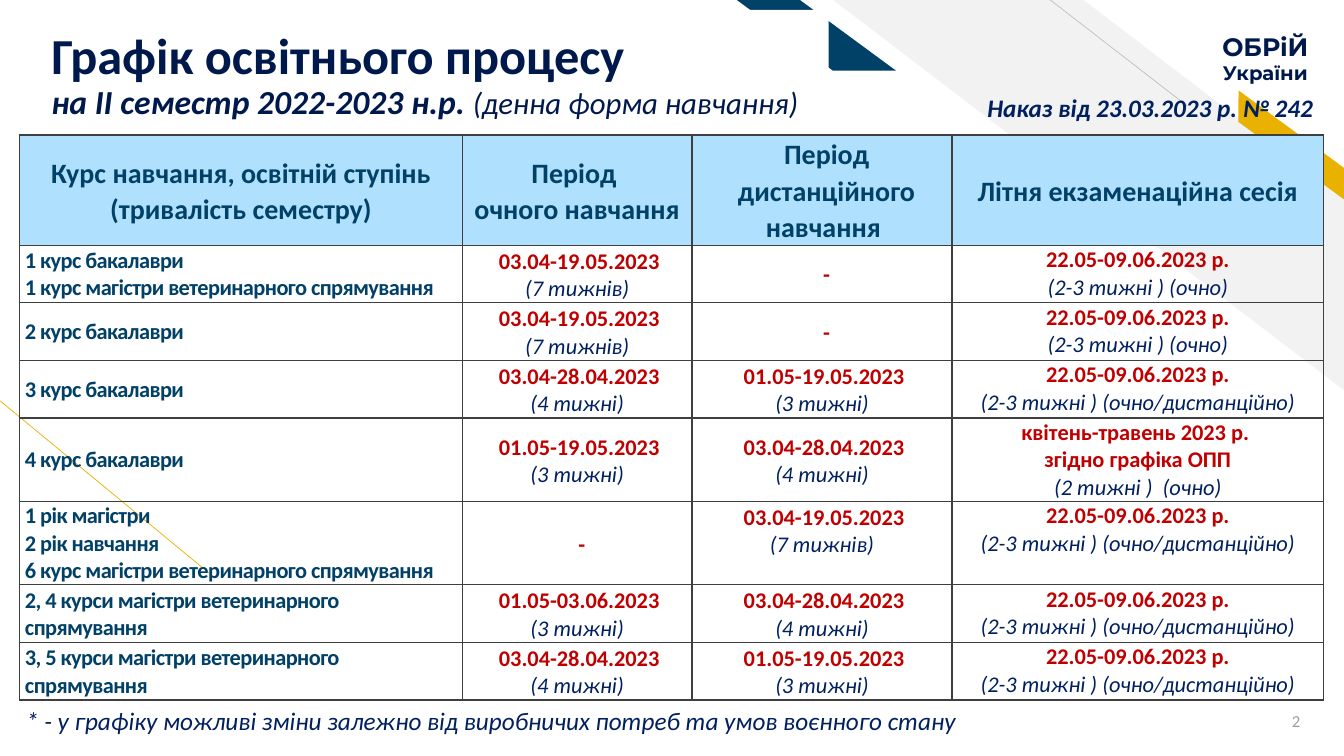
from dataclasses import dataclass

import lxml.etree
import pptx
import pptx.dml.color
import pptx.enum.shapes
import pptx.enum.text
import pptx.oxml.ns
import pptx.util

Cm = pptx.util.Cm
Kind = pptx.enum.shapes.MSO_SHAPE
Align = pptx.enum.text.PP_ALIGN
Anchor = pptx.enum.text.MSO_ANCHOR
qn = pptx.oxml.ns.qn

COLORS = {
    "navy": "00194C", "blue": "014067", "ink": "002060", "red": "C00000",
    "sky": "AFE0FE", "gold": "EAB200", "pale": "F2F2F2", "gray": "BFBFBF",
    "dim": "9F9F9F", "edge": "3F3F3F", "white": "FFFFFF",
}


@dataclass
class Band:
    kind: int
    box: tuple
    color: str
    adj: float
    turn: float = 0


@dataclass
class Stroke:
    start: tuple
    end: tuple
    color: str


@dataclass
class Term:
    group: str
    face: str
    remote: str
    exam: str
    middle: bool = False


BANDS = [
    Band(Kind.DIAGONAL_STRIPE, (21, 0, 12.87, 9.83), "pale", 0.51),
    Band(Kind.PARALLELOGRAM, (30.66, 3.33, 3.76, 0.64), "gold", 0.72, 36.3),
    Band(Kind.PARALLELOGRAM, (18.57, 0, 4.01, 1.78), "blue", 1.36),
]
STROKES = [
    Stroke((5.28, 14.45), (0, 10.1), "gold"),
    Stroke((29.92, 2.67), (26.47, 0), "gray"),
]

HEADS = [
    "Курс навчання, освітній ступінь\n(тривалість семестру)",
    "Період \nочного навчання",
    "Період дистанційного навчання ",
    "Літня екзаменаційна сесія",
]
SUMMER = "22.05-09.06.2023 р."
ON_SITE = f"{SUMMER}\n(2-3 тижні ) (очно)"
MIXED = f"{SUMMER}\n(2-3 тижні ) (очно/дистанційно)"
APRIL = "03.04-28.04.2023 \n(4 тижні)"
MAY = "01.05-19.05.2023 \n(3 тижні)"
SPRING = "03.04-19.05.2023 \n(7 тижнів)"
TERMS = [
    Term("1 курс бакалаври\n1 курс магістри ветеринарного спрямування",
         SPRING, "-", ON_SITE),
    Term("2 курс бакалаври", SPRING, "-", ON_SITE),
    Term("3 курс бакалаври", APRIL, MAY, MIXED),
    Term("4 курс бакалаври", MAY, APRIL,
         "квітень-травень 2023 р. \nзгідно графіка ОПП\n(2 тижні )  (очно)", True),
    Term("1 рік магістри\n2 рік навчання\n6 курс магістри ветеринарного спрямування",
         "-", SPRING, MIXED),
    Term("2, 4 курси магістри ветеринарного спрямування",
         "01.05-03.06.2023 \n(3 тижні)", APRIL, MIXED),
    Term("3, 5 курси магістри ветеринарного спрямування", APRIL, MAY, MIXED),
]
WIDTHS = [11.15, 5.79, 6.55, 9.37]
HEIGHTS = [2.76, 1.45, 1.45, 1.45, 2.09, 2.09, 1.45, 1.45]


def rgb(name: str):
    return pptx.dml.color.RGBColor.from_string(COLORS[name])


def write(par, text: str, size: float, color: str, bold=False, slant=False,
          font="Calibri", track=0.0) -> None:
    """Add a run to a paragraph; track is the letter spacing in points."""
    run = par.add_run()
    run.text = text
    run.font.name, run.font.size = font, pptx.util.Pt(size)
    run.font.bold, run.font.italic = bold, slant
    run.font.color.rgb = rgb(color)
    if track:
        run.font._element.set("spc", str(round(track * 100)))


def next_par(frame, index: int):
    return frame.add_paragraph() if index else frame.paragraphs[0]


def draw_band(slide, band: Band) -> None:
    shape = slide.shapes.add_shape(band.kind, *map(Cm, band.box))
    shape.adjustments[0] = band.adj
    shape.rotation = band.turn
    shape.element.spPr.get_or_add_xfrm().set("flipH", "1")
    shape.shadow.inherit = False
    shape.fill.solid()
    shape.fill.fore_color.rgb = rgb(band.color)
    shape.line.fill.background()


def draw_stroke(slide, stroke: Stroke) -> None:
    line = slide.shapes.add_connector(
        pptx.enum.shapes.MSO_CONNECTOR.STRAIGHT,
        *map(Cm, stroke.start + stroke.end))
    line.line.color.rgb = rgb(stroke.color)
    line.line.width = pptx.util.Pt(0.5)
    lxml.etree.SubElement(line.element.spPr, qn("a:effectLst"))


def add_box(slide, box: tuple, align, wrap=True):
    frame = slide.shapes.add_textbox(*map(Cm, box)).text_frame
    frame.word_wrap = wrap
    frame.paragraphs[0].alignment = align
    return frame


def draw_title(slide) -> None:
    title = slide.shapes.title
    slide.shapes._spTree.append(title.element)
    title.left, title.top, title.width, title.height = map(Cm, (1.04, 0.25, 19.84, 2.82))
    title.fill.solid()
    title.fill.fore_color.rgb = rgb("white")
    frame = title.text_frame
    frame.auto_size = pptx.enum.text.MSO_AUTO_SIZE.NONE
    frame.vertical_anchor = Anchor.BOTTOM
    frame.margin_bottom = 0
    par = frame.paragraphs[0]
    par.alignment, par.line_spacing = Align.LEFT, 0.9
    write(par, "Графік освітнього процесу", 36, "navy", bold=True)
    par.add_line_break()
    write(par, "на ІІ семестр 2022-2023 н.р. ", 24, "navy", bold=True, slant=True)
    write(par, "(денна форма навчання)", 22, "navy", slant=True)


def set_edge(cell) -> None:
    """Put a thin dark border on all four sides of a cell."""
    props = cell._tc.get_or_add_tcPr()
    for index, side in enumerate("LRTB"):
        line = lxml.etree.Element(qn(f"a:ln{side}"), w="12700")
        fill = lxml.etree.SubElement(line, qn("a:solidFill"))
        lxml.etree.SubElement(fill, qn("a:srgbClr"), val=COLORS["edge"])
        props.insert(index, line)


def fill_cell(cell, text: str, row: int, col: int, middle: bool) -> None:
    head = row == 0
    cell.margin_left = cell.margin_right = Cm(0.1 if head else 0.13)
    cell.margin_top, cell.margin_bottom = Cm(0.03), 0
    cell.vertical_anchor = Anchor.MIDDLE if middle else Anchor.TOP
    if head:
        cell.fill.solid()
        cell.fill.fore_color.rgb = rgb("sky")
    else:
        cell.fill.background()
    set_edge(cell)
    for index, line in enumerate(text.split("\n")):
        par = next_par(cell.text_frame, index)
        par.alignment = Align.CENTER if head or col else Align.LEFT
        first = index == 0 and col in (1, 2)
        if head or first:
            par.line_spacing = 1.06
        if first and (not head or col == 2):
            par._p.get_or_add_pPr().set("marL", str(Cm(0.23)))
        if head:
            write(par, line, 20, "blue", bold=True)
        elif col == 0:
            write(par, line, 16, "blue", bold=True, track=-0.4)
        elif line.startswith("("):
            write(par, line, 16, "ink", slant=True)
        else:
            write(par, line, 16, "red", bold=True)


def draw_table(slide) -> None:
    table = slide.shapes.add_table(
        len(HEIGHTS), len(WIDTHS), Cm(0.5), Cm(3.4),
        Cm(sum(WIDTHS)), Cm(sum(HEIGHTS))).table
    table.first_row = table.horz_banding = False
    for col, width in enumerate(WIDTHS):
        table.columns[col].width = Cm(width)
    rows = [HEADS] + [[t.group, t.face, t.remote, t.exam] for t in TERMS]
    for row, texts in enumerate(rows):
        table.rows[row].height = Cm(HEIGHTS[row])
        for col, text in enumerate(texts):
            middle = row == 0 or col == 0 or text == "-" or TERMS[row - 1].middle
            fill_cell(table.cell(row, col), text, row, col, middle)


def main() -> None:
    deck = pptx.Presentation()
    deck.slide_width, deck.slide_height = Cm(33.87), Cm(19.05)
    slide = deck.slides.add_slide(deck.slide_layouts[5])
    for band in BANDS:
        draw_band(slide, band)
    for stroke in STROKES:
        draw_stroke(slide, stroke)

    badge = add_box(slide, (30.53, 0.66, 2.72, 1.63), Align.CENTER, wrap=False)
    for index, (text, size) in enumerate([("ОБРіЙ", 18), ("України", 14)]):
        par = next_par(badge, index)
        par.alignment = Align.CENTER
        write(par, text, size, "navy", bold=True, font="Montserrat")

    draw_title(slide)
    draw_table(slide)

    page = add_box(slide, (30.96, 17.65, 2.06, 1.02), Align.RIGHT)
    page.vertical_anchor = Anchor.MIDDLE
    write(page.paragraphs[0], "2", 12, "dim")
    note = add_box(slide, (0.41, 17.65, 31.57, 1.02), Align.LEFT)
    write(note.paragraphs[0], "* - у графіку можливі зміни залежно від виробничих "
          "потреб та умов воєнного стану", 18, "ink", slant=True)
    order = add_box(slide, (23.19, 2.21, 10.16, 1.02), Align.RIGHT)
    write(order.paragraphs[0], "Наказ від 23.03.2023 р. № 242", 18, "ink",
          bold=True, slant=True)
    deck.save("out.pptx")


if __name__ == "__main__":
    main()
